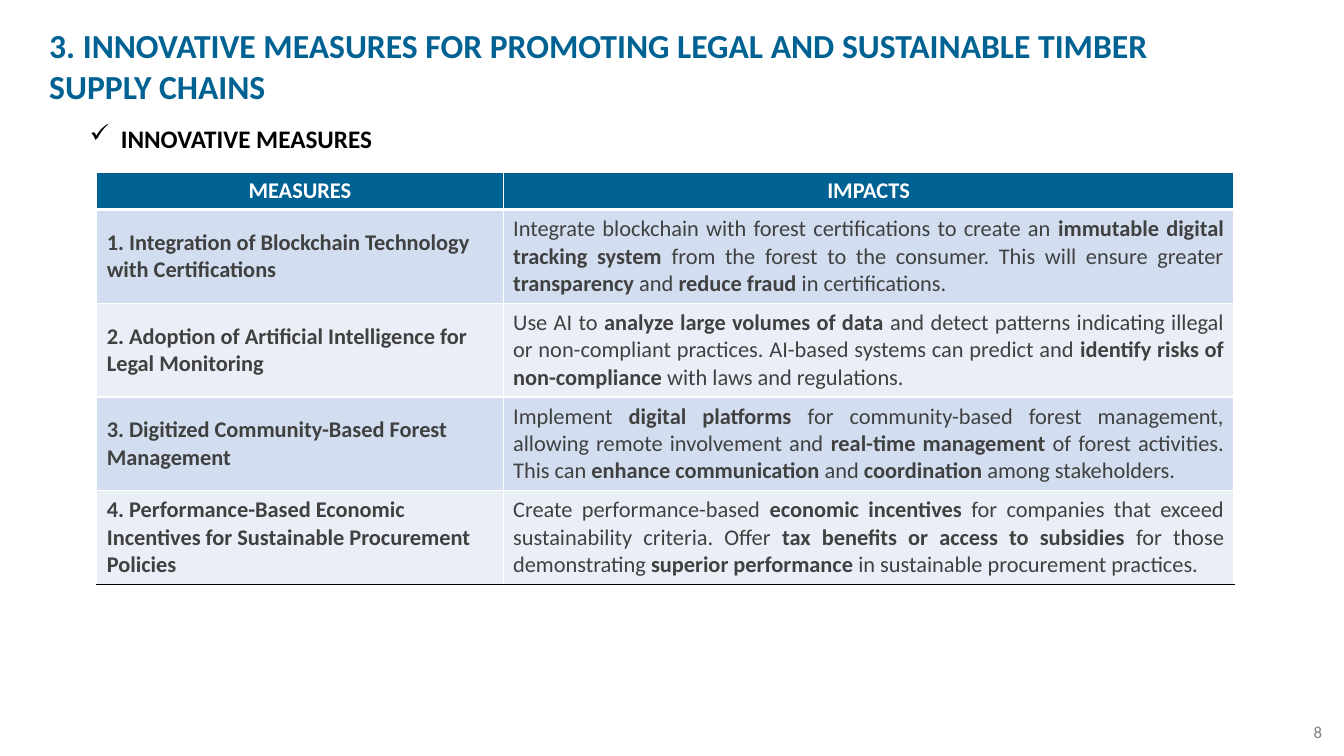
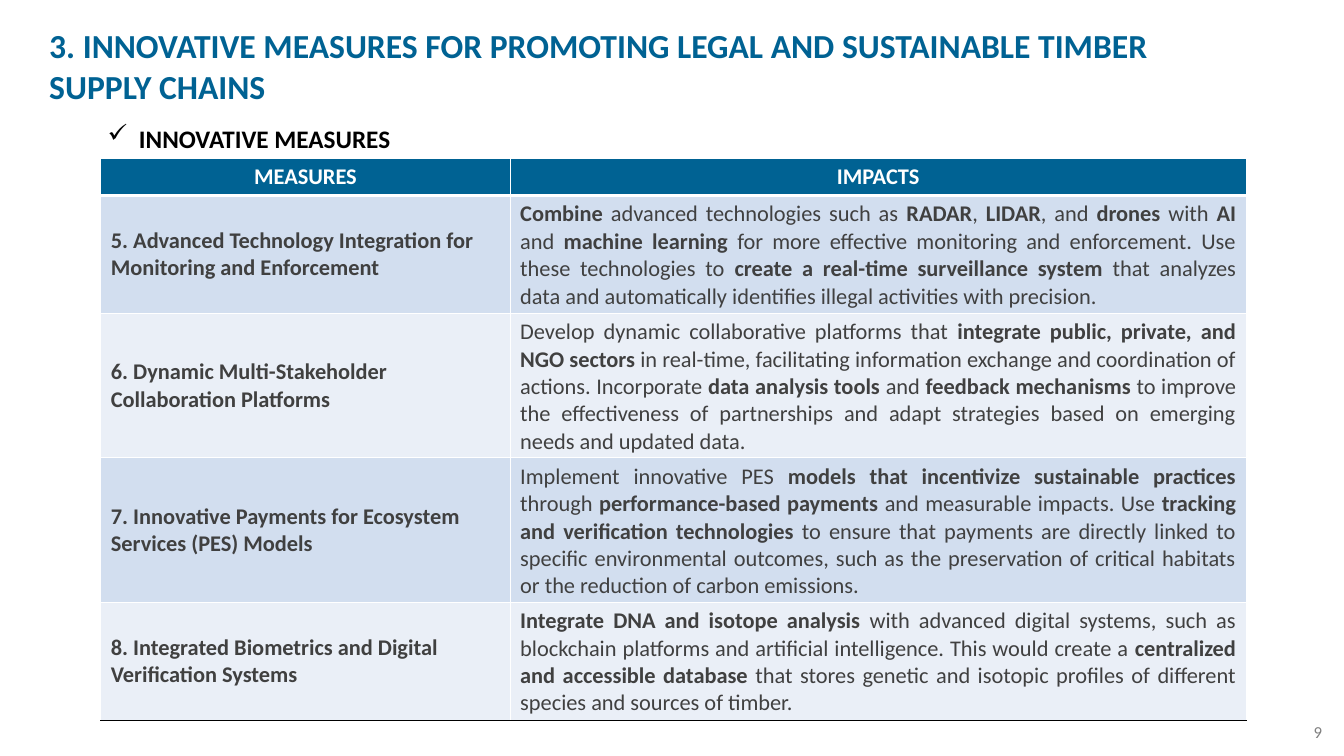
from lxml import etree
from pptx import Presentation
from pptx.dml.color import RGBColor
from pptx.enum import text
from pptx.oxml import ns
from pptx.util import Inches, Pt

BLUE = RGBColor(0x00, 0x62, 0x93)
BAND_DARK = RGBColor(0xD2, 0xDE, 0xEF)
BAND_LIGHT = RGBColor(0xEA, 0xEF, 0xF7)
WHITE = RGBColor(0xFF, 0xFF, 0xFF)
BLACK = RGBColor(0x00, 0x00, 0x00)
BODY = RGBColor(0x40, 0x40, 0x40)
GREY = RGBColor(0x80, 0x80, 0x80)
FONT = "Calibri"
TITLE = "3. INNOVATIVE MEASURES FOR PROMOTING LEGAL AND SUSTAINABLE TIMBER SUPPLY CHAINS"
SUBTITLE = "INNOVATIVE MEASURES"
HEADERS = ("MEASURES", "IMPACTS")
HEADER_HEIGHT = 0.37

SLIDES = [
    {
        "number": 8,
        "subtitle_left": 0.79,
        "table_at": (0.96, 1.71),
        "columns": (4.03, 7.25),
        "row_heights": (0.93, 0.93, 0.93, 0.93),
        "rows": [
            ("1. Integration of Blockchain Technology with Certifications",
             "Integrate blockchain with forest certifications to create an **immutable digital "
             "tracking system** from the forest to the consumer. This will ensure greater "
             "**transparency** and **reduce fraud** in certifications."),
            ("2. Adoption of Artificial Intelligence for Legal Monitoring",
             "Use AI to **analyze large volumes of data** and detect patterns indicating illegal "
             "or non-compliant practices. AI-based systems can predict and **identify risks of "
             "non-compliance** with laws and regulations."),
            ("3. Digitized Community-Based Forest Management",
             "Implement **digital platforms **for community-based forest management, allowing "
             "remote involvement and **real-time management** of forest activities. This can "
             "**enhance communication** and **coordination** among stakeholders."),
            ("4. Performance-Based Economic Incentives for Sustainable Procurement Policies",
             "Create performance-based **economic incentives** for companies that exceed "
             "sustainability criteria. Offer **tax benefits or access to subsidies **for those "
             "demonstrating **superior performance** in sustainable procurement practices."),
        ],
    },
    {
        "number": 9,
        "subtitle_left": 0.97,
        "table_at": (1, 1.57),
        "columns": (4.06, 7.3),
        "row_heights": (1.17, 1.43, 1.43, 1.17),
        "rows": [
            ("5. Advanced Technology Integration for Monitoring and Enforcement",
             "**Combine** advanced technologies such as **RADAR**, **LIDAR**, and **drones** with "
             "**AI** and **machine learning** for more effective monitoring and enforcement. Use "
             "these technologies to **create a real-time surveillance system** that analyzes data "
             "and automatically identifies illegal activities with precision."),
            ("6. Dynamic Multi-Stakeholder Collaboration Platforms",
             "Develop dynamic collaborative platforms that **integrate public, private, and NGO "
             "sectors** in real-time, facilitating information exchange and coordination of "
             "actions. Incorporate **data analysis tools** and **feedback mechanisms** to improve "
             "the effectiveness of partnerships and adapt strategies based on emerging needs and "
             "updated data."),
            ("7. Innovative Payments for Ecosystem Services (PES) Models",
             "Implement innovative PES **models that incentivize sustainable practices **through "
             "**performance-based payments** and measurable impacts. Use **tracking and "
             "verification technologies** to ensure that payments are directly linked to specific "
             "environmental outcomes, such as the preservation of critical habitats or the "
             "reduction of carbon emissions."),
            ("8. Integrated Biometrics and Digital Verification Systems",
             "**Integrate DNA and isotope analysis **with advanced digital systems, such as "
             "blockchain platforms and artificial intelligence. This would create a **centralized "
             "and accessible database** that stores genetic and isotopic profiles of different "
             "species and sources of timber."),
        ],
    },
]


def style(font, size, color, bold=False):
    font.name = FONT
    font.size = Pt(size)
    font.color.rgb = color
    font.bold = bold


def add_text(s, box, content, size, color, bold=False):
    sp = s.shapes.add_textbox(*map(Inches, box))
    tf = sp.text_frame
    tf.word_wrap = True
    tf.text = content
    p = tf.paragraphs[0]
    style(p.runs[0].font, size, color, bold)
    return p


def add_check_bullet(p):
    pPr = p._p.get_or_add_pPr()
    pPr.set("marL", str(Inches(0.31)))
    pPr.set("indent", str(-Inches(0.31)))
    etree.SubElement(pPr, ns.qn("a:buChar"), char="✓")


def set_borders(cell, bottom_color, bottom_width):
    tcPr = cell._tc.get_or_add_tcPr()
    sides = (("L", WHITE, 1), ("R", WHITE, 1), ("T", WHITE, 1),
             ("B", bottom_color, bottom_width))
    for i, (side, color, width) in enumerate(sides):
        ln = etree.Element(ns.qn(f"a:ln{side}"), w=str(Pt(width)))
        fill = etree.SubElement(ln, ns.qn("a:solidFill"))
        etree.SubElement(fill, ns.qn("a:srgbClr"), val=str(color))
        tcPr.insert(i, ln)


def fill_cell(cell, content, color, align, fill, bottom=(WHITE, 1)):
    cell.fill.solid()
    cell.fill.fore_color.rgb = fill
    cell.vertical_anchor = text.MSO_ANCHOR.MIDDLE
    p = cell.text_frame.paragraphs[0]
    p.alignment = align
    for i, part in enumerate(content.split("**")):
        if part:
            r = p.add_run()
            r.text = part
            style(r.font, 16, color, i % 2 == 1)
    set_borders(cell, *bottom)


def add_measures_table(s, at, columns, row_heights, rows):
    heights = (HEADER_HEIGHT, *row_heights)
    box = (*at, sum(columns), sum(heights))
    table = s.shapes.add_table(len(heights), len(columns), *map(Inches, box)).table
    for column, width in zip(table.columns, columns):
        column.width = Inches(width)
    for row, height in zip(table.rows, heights):
        row.height = Inches(height)
    for c, header in enumerate(HEADERS):
        fill_cell(table.cell(0, c), f"**{header}**", WHITE, text.PP_ALIGN.CENTER, BLUE,
                  (WHITE, 3))
    for n, (measure, impact) in enumerate(rows, 1):
        fill = BAND_DARK if n % 2 else BAND_LIGHT
        bottom = (BLACK if n == len(rows) else WHITE, 1)
        fill_cell(table.cell(n, 0), f"**{measure}**", BODY, text.PP_ALIGN.LEFT, fill, bottom)
        fill_cell(table.cell(n, 1), impact, BODY, text.PP_ALIGN.JUSTIFY, fill, bottom)


def add_measures_slide(prs, number, subtitle_left, table_at, columns, row_heights, rows):
    s = prs.slides.add_slide(prs.slide_layouts[6])
    add_text(s, (12.93, 7.11, 0.4, 0.3), str(number), 12, GREY)
    add_text(s, (0.39, 0.2, 11.4, 0.91), TITLE, 24, BLUE, True)
    add_check_bullet(add_text(s, (subtitle_left, 1.17, 6.72, 0.4), SUBTITLE, 18, BLACK, True))
    add_measures_table(s, table_at, columns, row_heights, rows)


def main():
    prs = Presentation()
    prs.slide_width = Inches(13.33)
    prs.slide_height = Inches(7.5)
    for slide in SLIDES:
        add_measures_slide(prs, **slide)
    prs.save("out.pptx")


if __name__ == "__main__":
    main()
